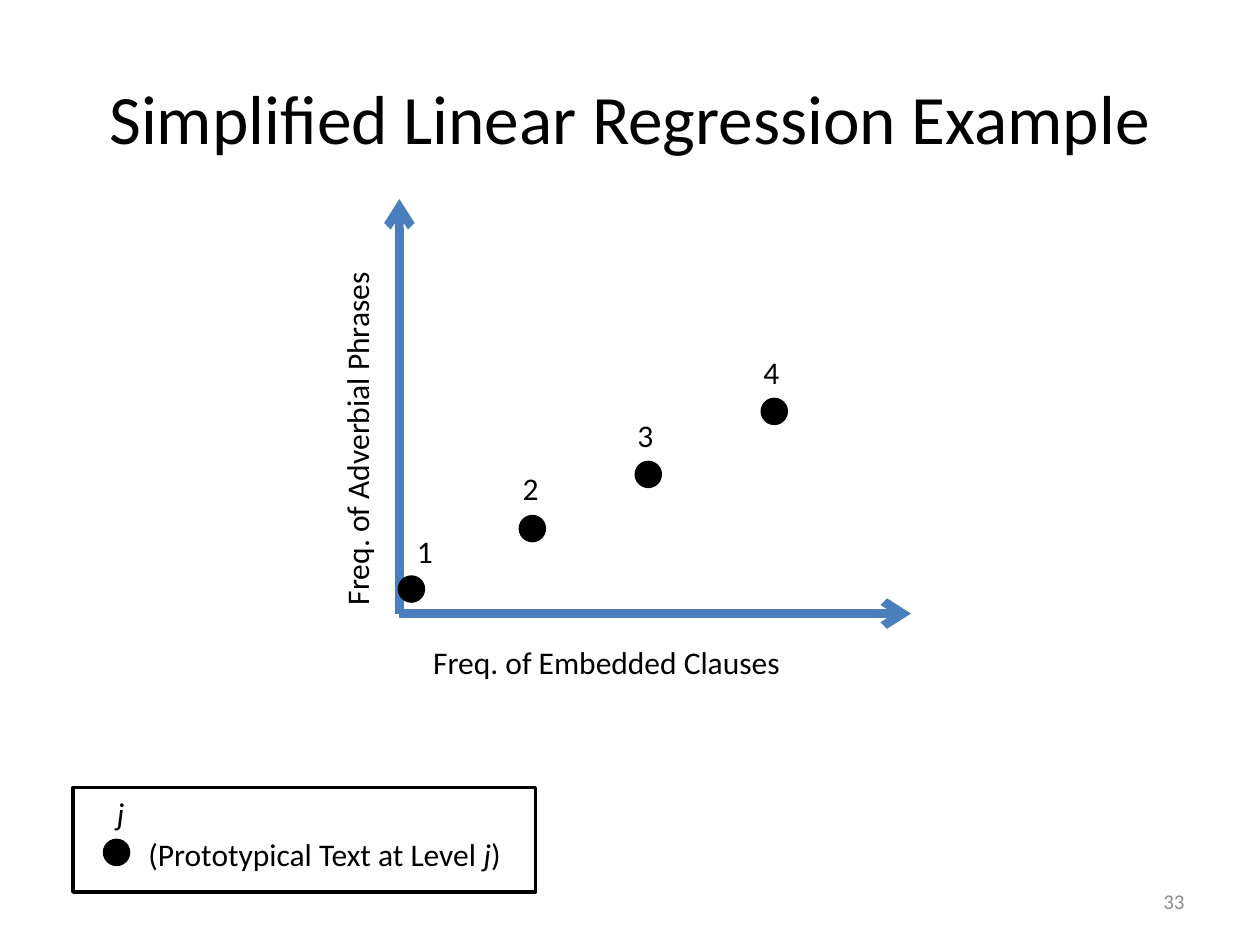
from lxml import etree
from pptx import Presentation
from pptx.dml.color import RGBColor
from pptx.enum.shapes import MSO_CONNECTOR as LINE, MSO_SHAPE as SHAPE
from pptx.enum.text import MSO_ANCHOR as ANCHOR, PP_ALIGN as ALIGN
from pptx.oxml.ns import qn
from pptx.util import Inches, Pt

BLACK = RGBColor(0x00, 0x00, 0x00)
BLUE = RGBColor(0x4B, 0x7E, 0xBC)
GRAY = RGBColor(0x8C, 0x8C, 0x8C)
DOT = 0.19


def add_text(parent, text, left, top, width, height=0.4, size=18, color=BLACK):
    box = parent.add_textbox(Inches(left), Inches(top), Inches(width), Inches(height))
    box.text_frame.word_wrap = True
    para = box.text_frame.paragraphs[0]
    para.text = text
    para.font.name = "Calibri"
    para.font.size = Pt(size)
    para.font.color.rgb = color
    return box


def add_dot(parent, left, top):
    dot = parent.add_shape(SHAPE.OVAL, Inches(left), Inches(top), Inches(DOT), Inches(DOT))
    dot.shadow.inherit = False
    dot.fill.solid()
    dot.fill.fore_color.rgb = BLACK
    dot.line.color.rgb = BLACK
    dot.line.width = Pt(2)


prs = Presentation()
prs.slide_width, prs.slide_height = Inches(10), Inches(7.5)
slide = prs.slides.add_slide(prs.slide_layouts[5])
shapes = slide.shapes

# Title
title = shapes.title
title.left, title.top = Inches(0.5), Inches(0.3)
title.width, title.height = Inches(9), Inches(1.25)
title.text_frame.vertical_anchor = ANCHOR.MIDDLE
head = title.text_frame.paragraphs[0]
head.text = "Simplified Linear Regression Example"
head.alignment = ALIGN.CENTER
head.font.name = "Calibri"
head.font.size = Pt(39.6)
head.font.color.rgb = BLACK

# Slide number
num = add_text(shapes, "33", 7.17, 6.95, 2.33, size=12, color=GRAY)
num.text_frame.vertical_anchor = ANCHOR.MIDDLE
num.text_frame.paragraphs[0].alignment = ALIGN.RIGHT

# Axes, both starting at the origin
left, base = 3.17, 4.87
for x, y in [(7.23, base), (left, 1.58)]:
    axis = shapes.add_connector(LINE.STRAIGHT, Inches(left), Inches(base), Inches(x), Inches(y))
    axis.line.color.rgb = BLUE
    axis.line.width = Pt(5)
    etree.SubElement(axis.line._get_or_add_ln(), qn("a:tailEnd"), type="arrow")
    etree.SubElement(axis._element.spPr, qn("a:effectLst"))

# Axis labels
add_text(shapes, "Freq. of Embedded Clauses", 3.34, 5.05, 4.04, 0.55)
add_text(shapes, "Freq. of Adverbial Phrases", 1.26, 3.13, 3.14).rotation = 270

# Data points: dot corner, then label corner
points = [
    (3.17, 4.58, 3.21, 4.17),
    (4.13, 4.1, 4.05, 3.67),
    (5.05, 3.67, 4.96, 3.25),
    (6.05, 3.17, 5.96, 2.75),
]
for level, (x, y, tx, ty) in enumerate(points, 1):
    add_dot(shapes, x, y)
    add_text(shapes, str(level), tx, ty, 0.33)

# Legend
legend = shapes.add_group_shape().shapes
add_dot(legend, 0.83, 6.67)
note = add_text(legend, "(Prototypical Text at Level ", 1.08, 6.58, 3.1)
para = note.text_frame.paragraphs[0]
for text, slant in [("j", True), (")", False)]:
    run = para.add_run()
    run.text = text
    run.font.italic = slant
mark = add_text(legend, "j", 0.83, 6.25, 0.26)
mark.text_frame.paragraphs[0].font.italic = True
frame = legend.add_shape(SHAPE.RECTANGLE, Inches(0.58), Inches(6.25), Inches(3.67), Inches(0.83))
frame.shadow.inherit = False
frame.fill.background()
frame.line.color.rgb = BLACK
frame.line.width = Pt(2)

prs.save("out.pptx")
